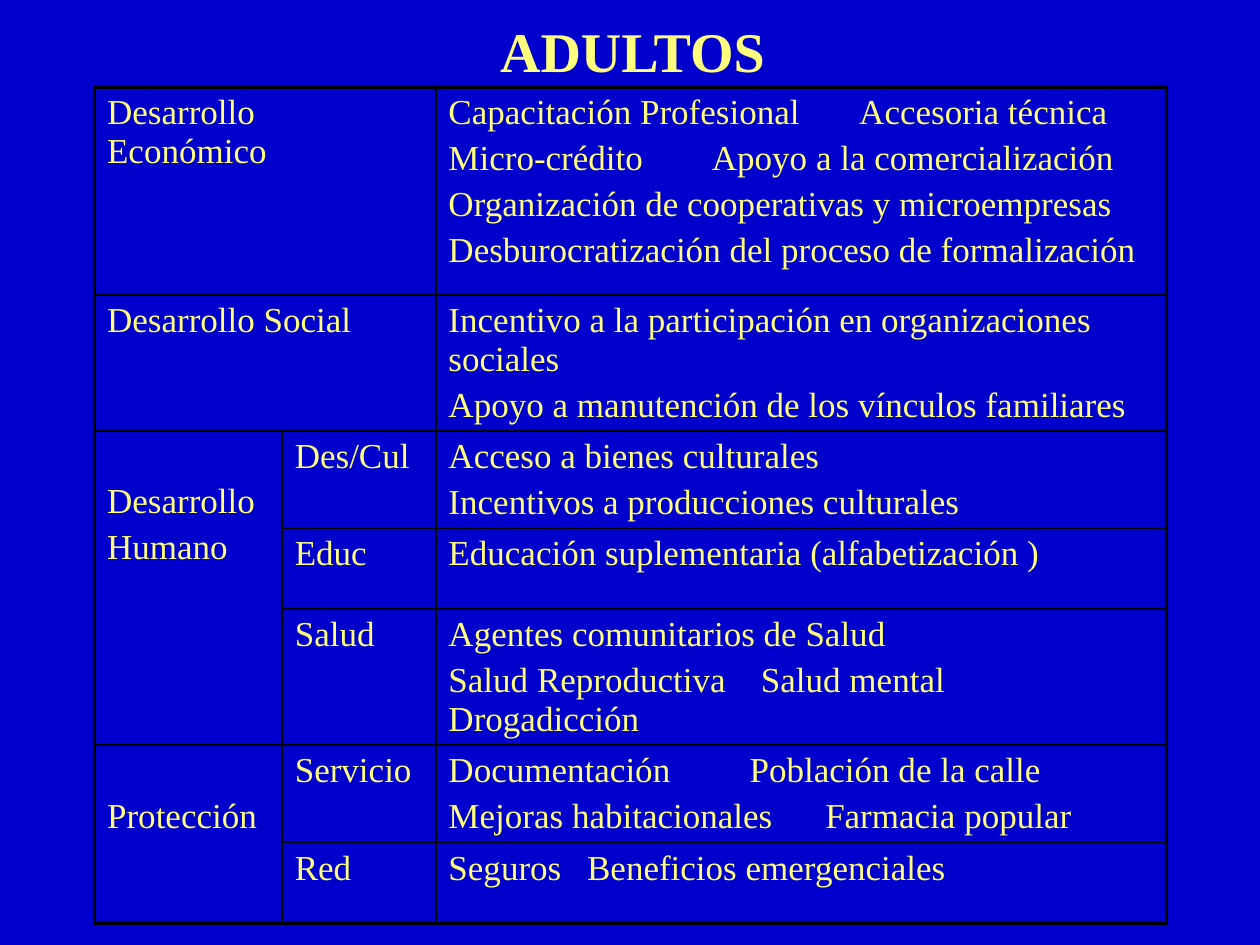
from lxml.etree import SubElement
from pptx import Presentation
from pptx.dml.color import RGBColor
from pptx.enum.text import MSO_ANCHOR as Anchor, PP_ALIGN as Align
from pptx.oxml.ns import qn
from pptx.util import Inches, Pt

COLORS = {"back": "0000CC", "text": "FFFF7D", "line": "000000"}
FONT = "Times New Roman"
WIDTH, HEIGHT = 10, 7.5
COLS = [1.49, 1.22, 5.8]
ROWS = [1.65, 1.08, 0.77, 0.64, 1.08, 0.77, 0.64]
OUTER, INNER = 2.25, 1
NO_STYLE = "{2D5ABB26-0587-4C30-8999-92F81FD0307C}"

# (first row, last row, first column, last column, paragraphs)
AREAS = [
    (0, 0, 0, 1, ["Desarrollo Económico"]),
    (1, 1, 0, 1, ["Desarrollo Social"]),
    (2, 4, 0, 0, ["Desarrollo", "Humano"]),
    (5, 6, 0, 0, ["Protección"]),
]
SUBAREAS = ["Des/Cul", "Educ", "Salud", "Servicio", "Red"]
ACTIONS = [
    ["Capacitación Profesional\tAccesoria técnica",
     "Micro-crédito\tApoyo a la comercialización",
     "Organización de cooperativas y microempresas",
     "Desburocratización del proceso de formalización"],
    ["Incentivo a la participación en organizaciones sociales",
     "Apoyo a manutención de los vínculos familiares"],
    ["Acceso a bienes culturales", "Incentivos a producciones culturales"],
    ["Educación suplementaria (alfabetización )"],
    ["Agentes comunitarios de Salud",
     "Salud Reproductiva\tSalud mental\vDrogadicción"],
    ["Documentación\tPoblación de la calle",
     "Mejoras habitacionales\tFarmacia popular"],
    ["Seguros\tBeneficios emergenciales"],
]
# Tab stops in inches, by the word before the tab
TABS = {"Capacitación Profesional": 3.26, "Micro-crédito": 2.09,
        "Salud Reproductiva": 2.48, "Documentación": 2.39,
        "Mejoras habitacionales": 2.99, "Seguros": 1.1}


class Deck:
    def __init__(self):
        self.prs = Presentation()
        self.prs.slide_width, self.prs.slide_height = Inches(WIDTH), Inches(HEIGHT)
        self.s = self.prs.slides.add_slide(self.prs.slide_layouts[5])
        fill = self.s.background.fill
        fill.solid()
        fill.fore_color.rgb = RGBColor.from_string(COLORS["back"])

    def box(self, x, y, w, h):
        """Turn shares of the slide into lengths."""
        return [Inches(v) for v in (x * WIDTH, y * HEIGHT, w * WIDTH, h * HEIGHT)]

    def style(self, p, size, bold=False):
        p.font.name, p.font.size, p.font.bold = FONT, Pt(size), bold
        p.font.color.rgb = RGBColor.from_string(COLORS["text"])

    def title(self, text, *shares):
        sp = self.s.shapes.title
        sp.left, sp.top, sp.width, sp.height = self.box(*shares)
        tf = sp.text_frame
        tf.text, tf.vertical_anchor = text, Anchor.MIDDLE
        tf.paragraphs[0].alignment = Align.CENTER
        self.style(tf.paragraphs[0], 32, True)

    def table(self, *shares):
        frame = self.s.shapes.add_table(len(ROWS), len(COLS), *self.box(*shares))
        table = frame.table
        table.first_row = table.horz_banding = False
        table._tbl.tblPr.find(qn("a:tableStyleId")).text = NO_STYLE
        for col, w in zip(table.columns, COLS):
            col.width = Inches(w)
        for row, h in zip(table.rows, ROWS):
            row.height = Inches(h)
        return table

    def cell_text(self, cell, lines):
        tf = cell.text_frame
        for i, line in enumerate(lines):
            p = tf.add_paragraph() if i else tf.paragraphs[0]
            p.text = line
            p.space_before = Pt(4)
            self.style(p, 20)
            word, tab, _ = line.partition("\t")
            if tab:
                self.tab_stop(p, TABS[word])

    def tab_stop(self, p, inches):
        pPr = p._p.get_or_add_pPr()
        stops = pPr.makeelement(qn("a:tabLst"))
        SubElement(stops, qn("a:tab"), pos=str(Inches(inches)), algn="l")
        pPr.find(qn("a:defRPr")).addprevious(stops)

    def borders(self, cell, row, col):
        """Thick lines on the table's edge, thin lines inside it."""
        bottom = row + (cell.span_height if cell.is_merge_origin else 1)
        right = col + (cell.span_width if cell.is_merge_origin else 1)
        edges = {"a:lnL": col == 0, "a:lnR": right == len(COLS),
                 "a:lnT": row == 0, "a:lnB": bottom == len(ROWS)}
        tcPr = cell._tc.get_or_add_tcPr()
        for tag, on_edge in edges.items():
            if cell.is_spanned and not on_edge:
                continue
            ln = SubElement(tcPr, qn(tag), w=str(Pt(OUTER if on_edge else INNER)))
            fill = SubElement(ln, qn("a:solidFill"))
            SubElement(fill, qn("a:srgbClr"), val=COLORS["line"])
        cell.fill.background()


def main():
    deck = Deck()
    deck.title("ADULTOS", 0.075, 0, 0.854, 0.107)
    table = deck.table(0.075, 0.092, 0.85, 0.88)
    for top, bottom, left, right, lines in AREAS:
        cell = table.cell(top, left)
        cell.merge(table.cell(bottom, right))
        deck.cell_text(cell, lines)
        if bottom > top:
            cell.margin_top = Inches(0.41)  # starts one line lower
    for row, name in enumerate(SUBAREAS, start=2):
        deck.cell_text(table.cell(row, 1), [name])
    for row, lines in enumerate(ACTIONS):
        deck.cell_text(table.cell(row, 2), lines)
    for row in range(len(ROWS)):
        for col in range(len(COLS)):
            deck.borders(table.cell(row, col), row, col)
    deck.prs.save("out.pptx")


if __name__ == "__main__":
    main()
